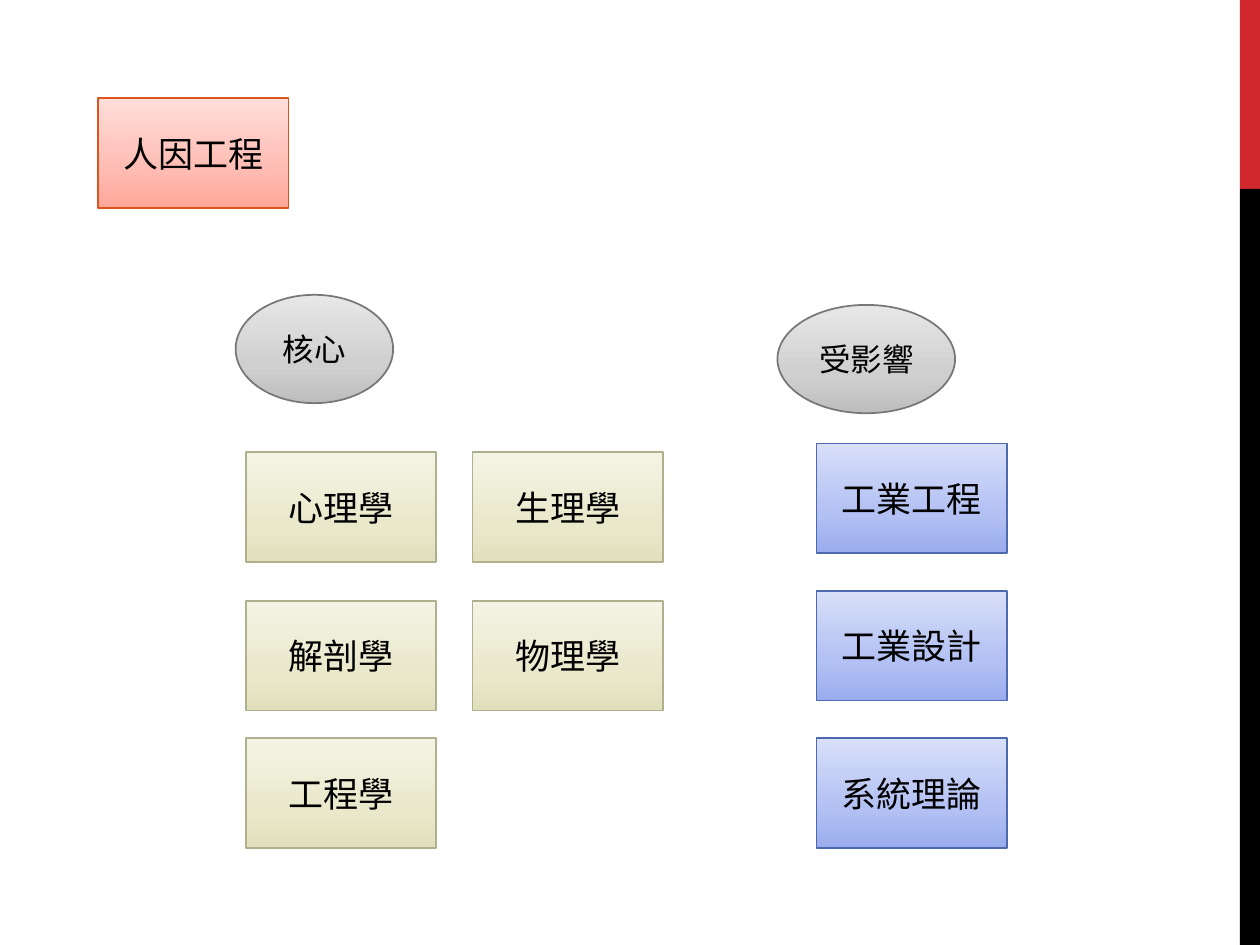
from dataclasses import dataclass

from lxml import etree
from pptx import Presentation
from pptx import util as u
from pptx.dml.color import RGBColor
from pptx.enum import shapes, text
from pptx.oxml.ns import qn


@dataclass(frozen=True)
class Theme:
    font: str = "Arial"
    ink: str = "000000"
    accent: str = "D1282E"
    box_size: int = 20
    oval_size: int = 18
    line_width: int = 1
    stops: tuple = (0, 35, 100)
    # Each style: gradient colours from bottom to top, then the outline
    topic: tuple = ("FFA698", "FFBCB3", "FFDED9", "DC551F")
    core: tuple = ("E1E0BC", "E9E8CB", "F4F4E5", "B1B08E")
    influenced: tuple = ("9AACED", "B2C0F3", "D8DFF9", "4E6AAE")
    heading: tuple = ("BEBEBE", "CFCFCF", "E7E7E7", "777777")


THEME = Theme()
BOX_WIDTH, BOX_HEIGHT = 1.51, 0.87
RECTANGLE = shapes.MSO_SHAPE.RECTANGLE
OVAL = shapes.MSO_SHAPE.OVAL


def add_plain_shape(page, kind, area):
    shape = page.shapes.add_shape(kind, *(u.Inches(value) for value in area))
    shape.shadow.inherit = False
    return shape


def fill_gradient(shape, colours):
    shape.fill.gradient()
    gradient = shape._element.spPr.find(qn("a:gradFill"))
    stop_list = gradient.find(qn("a:gsLst"))
    for stop in list(stop_list):
        stop_list.remove(stop)
    for position, colour in zip(THEME.stops, colours):
        stop = etree.SubElement(stop_list, qn("a:gs"), pos=str(position * 1000))
        etree.SubElement(stop, qn("a:srgbClr"), val=colour)
    gradient.find(qn("a:lin")).set("ang", str(270 * 60000))


def add_label(page, kind, area, wording, style, size):
    shape = add_plain_shape(page, kind, area)
    *colours, outline = style
    fill_gradient(shape, colours)
    shape.line.color.rgb = RGBColor.from_string(outline)
    shape.line.width = u.Pt(THEME.line_width)
    frame = shape.text_frame
    frame.word_wrap = True
    frame.vertical_anchor = text.MSO_ANCHOR.MIDDLE
    para = frame.paragraphs[0]
    para.alignment = text.PP_ALIGN.CENTER
    span = para.add_run()
    span.text = wording
    span.font.color.rgb = RGBColor.from_string(THEME.ink)
    for name, value in {"name": THEME.font, "size": u.Pt(size)}.items():
        setattr(span.font, name, value)


def add_box(page, left, top, wording, style):
    area = (left, top, BOX_WIDTH, BOX_HEIGHT)
    add_label(page, RECTANGLE, area, wording, style, THEME.box_size)


def add_side_band(page, left, top, width, height):
    # Red fifth above black remainder
    split = height / 5
    parts = ((top, split, THEME.accent), (top + split, height - split, THEME.ink))
    for part_top, part_height, colour in parts:
        band = add_plain_shape(page, RECTANGLE, (left, part_top, width, part_height))
        band.fill.solid()
        band.fill.fore_color.rgb = RGBColor.from_string(colour)
        band.line.fill.background()


def add_field_group(page, left, row_tops, column_step, columns, style):
    for column, names in enumerate(columns):
        for top, name in zip(row_tops, names):
            add_box(page, left + column * column_step, top, name, style)


def add_heading(page, area, wording):
    add_label(page, OVAL, area, wording, THEME.heading, THEME.oval_size)


def main():
    deck = Presentation()
    deck.slide_width, deck.slide_height = u.Inches(10), u.Inches(7.5)
    page = deck.slides.add_slide(deck.slide_layouts[6])

    add_side_band(page, 9.84, 0, 0.16, 7.5)

    # Topic
    add_box(page, 0.78, 0.78, "人因工程", THEME.topic)

    # Core fields
    core_columns = (("心理學", "解剖學", "工程學"), ("生理學", "物理學"))
    add_field_group(page, 1.95, (3.59, 4.77, 5.86), 1.8, core_columns, THEME.core)
    add_heading(page, (1.87, 2.34, 1.25, 0.86), "核心")

    # Influenced fields
    influenced_columns = (("工業工程", "工業設計", "系統理論"),)
    add_field_group(page, 6.48, (3.52, 4.69, 5.86), 0, influenced_columns, THEME.influenced)
    add_heading(page, (6.17, 2.42, 1.41, 0.86), "受影響")

    deck.save("out.pptx")


if __name__ == "__main__":
    main()
